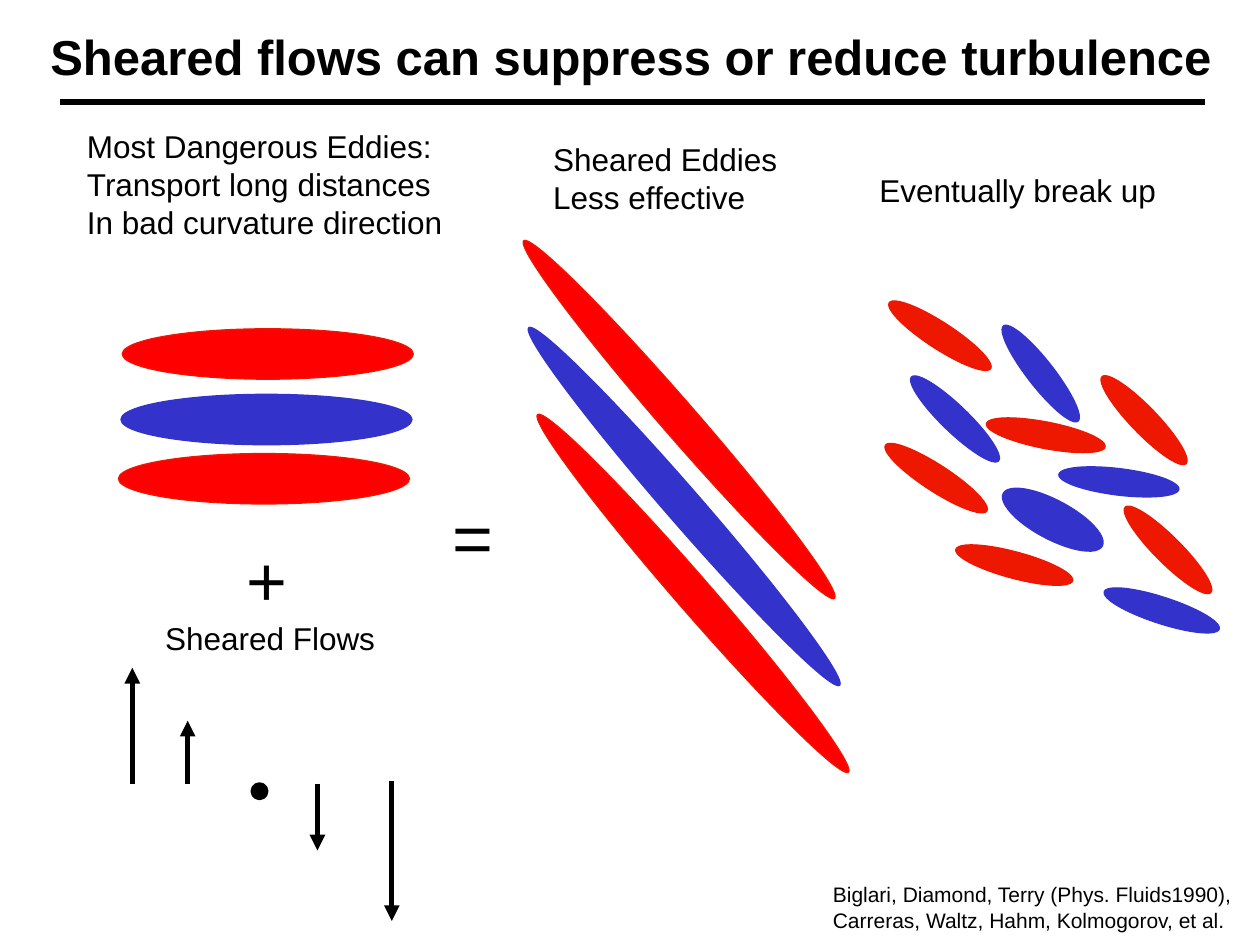
from lxml import etree
from pptx import Presentation
from pptx.dml.color import RGBColor
from pptx.enum import shapes, text
from pptx.oxml.ns import qn
from pptx.util import Inches, Pt

COLORS = {"black": "000000", "red": "FF0000", "brick": "EE1700", "blue": "3333CC"}
FONT = "Arial"

# left, top, width, height, size, bold, paragraphs (each a list of lines)
LABELS = [
    (0.36, 0.21, 9.4, 0.54, 28, True,
     [["Sheared flows can suppress or reduce turbulence"]]),
    (0.65, 1.01, 2.99, 0.97, 18, False,
     [["Most Dangerous Eddies:"], ["Transport long distances"], ["In bad curvature direction"]]),
    (4.35, 1.11, 1.95, 0.68, 18, False, [["Sheared Eddies"], ["Less effective"]]),
    (6.94, 1.36, 2.37, 0.39, 18, False, [["Eventually break up"]]),
    (1.92, 4.26, 0.49, 0.72, 40, False, [["+"]]),
    (3.55, 3.92, 0.49, 0.72, 40, False, [["="]]),
    (1.27, 4.91, 1.84, 0.39, 18, False, [["Sheared Flows"]]),
    (6.57, 7.0, 3.52, 0.5, 12, False,
     [["Biglari, Diamond, Terry (Phys. Fluids1990),",
       "Carreras, Waltz, Hahm, Kolmogorov, et al."]]),
]

# Eddies: left, top, fill
FLAT_SIZE = (2.31, 0.4)
FLAT_EDDIES = [(0.97, 2.61, "red"), (0.96, 3.13, "blue"), (0.94, 3.6, "red")]
SHEARED_SIZE, SHEARED_ANGLE = (3.76, 0.28), 49
SHEARED_EDDIES = [(3.51, 3.19, "red"), (3.55, 3.88, "blue"), (3.62, 4.57, "red")]

# Fragments: left, top, rotation
FRAGMENT_SIZE = (0.96, 0.21)
FRAGMENTS = {
    "brick": [(6.98, 2.56, 33), (7.82, 3.35, 11), (6.95, 3.69, 33),
              (8.6, 3.23, 46), (8.79, 4.26, 45), (7.57, 4.38, 15)],
    "blue": [(7.1, 3.22, 44), (8.74, 4.74, 18), (8.4, 3.72, 7), (7.78, 2.86, 52)],
}
WIDE_FRAGMENT = (7.91, 3.97, 0.89, 0.31, 28)

# Flow arrows: x, start y, end y
FLOW_ARROWS = [(1.05, 6.22, 5.3), (1.49, 6.22, 5.72), (2.52, 6.22, 6.75), (3.11, 6.2, 7.31)]
STILL_POINT = (2.01, 6.23, 0.1, 0.1)
TITLE_RULE = (0.48, 0.81, 9.56, 0.81)


def rgb(name):
    return RGBColor.from_string(COLORS[name])


def add_ellipse(parent, box, fill, rotation=0, line_width=0.75):
    sp = parent.add_shape(shapes.MSO_SHAPE.OVAL, *map(Inches, box))
    sp.shadow.inherit = False
    sp.rotation = rotation
    sp.fill.solid()
    sp.fill.fore_color.rgb = rgb(fill)
    sp.line.color.rgb = rgb("brick" if fill == "red" else fill)
    sp.line.width = Pt(line_width)


def add_line(parent, ends, arrow=False):
    cxn = parent.add_connector(shapes.MSO_CONNECTOR.STRAIGHT, *map(Inches, ends))
    cxn.line.color.rgb = rgb("black")
    cxn.line.width = Pt(3)
    if arrow:
        etree.SubElement(cxn.line._get_or_add_ln(), qn("a:tailEnd"), type="triangle")
    etree.SubElement(cxn._element.spPr, qn("a:effectLst"))


def add_label(parent, box, size, bold, paragraphs):
    tf = parent.add_textbox(*map(Inches, box)).text_frame
    tf.word_wrap = False
    tf.auto_size = text.MSO_AUTO_SIZE.SHAPE_TO_FIT_TEXT
    tf.margin_left = tf.margin_top = tf.margin_bottom = 0
    tf.margin_right = Inches(0.04)
    for i, lines in enumerate(paragraphs):
        p = tf.add_paragraph() if i else tf.paragraphs[0]
        p._p.get_or_add_pPr().set("marL", str(Inches(0.04)))
        for j, line in enumerate(lines):
            if j:
                p.add_line_break()
            r = p.add_run()
            r.text = line
            r.font.name, r.font.size, r.font.bold = FONT, Pt(size), bold
            r.font.color.rgb = rgb("black")


def main():
    prs = Presentation()
    prs.slide_width, prs.slide_height = Inches(10), Inches(7.5)
    s = prs.slides.add_slide(prs.slide_layouts[6])

    flat_group = s.shapes.add_group_shape().shapes
    for x, y, fill in FLAT_EDDIES:
        add_ellipse(flat_group, (x, y, *FLAT_SIZE), fill)
    for x, y, fill in SHEARED_EDDIES:
        add_ellipse(s.shapes, (x, y, *SHEARED_SIZE), fill, SHEARED_ANGLE)

    for x, start, end in FLOW_ARROWS:
        add_line(s.shapes, (x, start, x, end), arrow=True)
    add_ellipse(s.shapes, STILL_POINT, "black", line_width=3)

    for fill, fragments in FRAGMENTS.items():
        for x, y, angle in fragments:
            add_ellipse(s.shapes, (x, y, *FRAGMENT_SIZE), fill, angle)
    *box, angle = WIDE_FRAGMENT
    add_ellipse(s.shapes, box, "blue", angle)

    for *box, size, bold, paragraphs in LABELS:
        add_label(s.shapes, box, size, bold, paragraphs)
    add_line(s.shapes, TITLE_RULE)

    prs.save("out.pptx")


if __name__ == "__main__":
    main()
